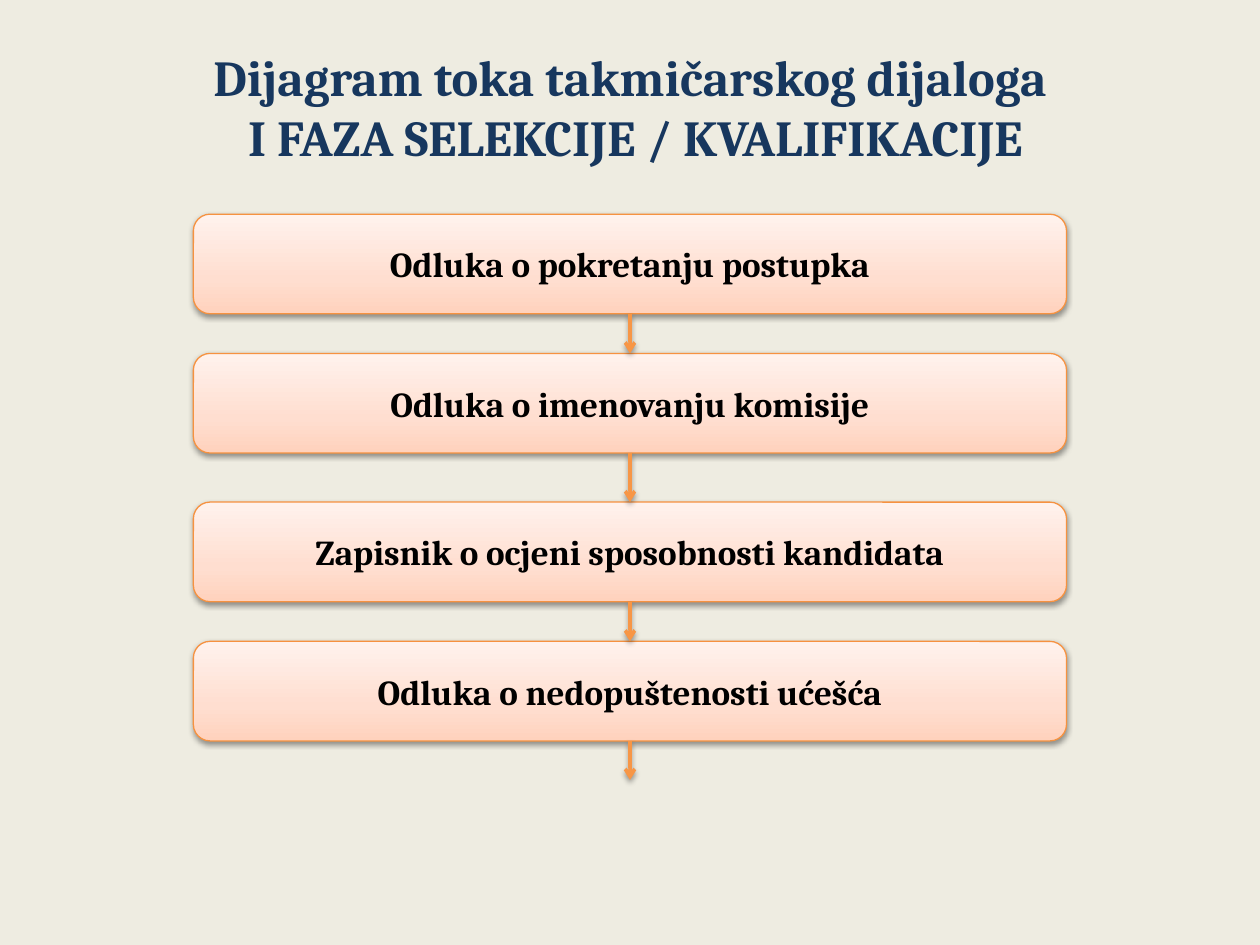
from pptx import Presentation, util as u
from pptx.dml.color import RGBColor
from pptx.enum import shapes, text
from pptx.oxml import parse_xml
from pptx.oxml.ns import nsdecls


def rgb(value):
    """Return the colour for a hex string."""
    return RGBColor.from_string(value)


class FlowSlide:
    """Style and drawing methods for a flow diagram on a grid of 0.1 inch cells."""

    FONT, TITLE, INK = "Cambria", "17375E", "000000"
    EDGE, ARROW, BACK = "F69240", "F79646", "EEECE1"
    STOPS = ((0, "FFD2BD"), (35, "FFDED0"), (100, "FFF2ED"))

    def __init__(self, prs, cols=100, rows=75):
        """Add a title-only slide with a plain background."""
        self.s = prs.slides.add_slide(prs.slide_layouts[5])
        self.cell_w, self.cell_h = prs.slide_width / cols, prs.slide_height / rows
        fill = self.s.background.fill
        fill.solid()
        fill.fore_color.rgb = rgb(self.BACK)

    def at(self, col, row):
        """Convert a grid position or size to lengths."""
        return u.Emu(round(col * self.cell_w)), u.Emu(round(row * self.cell_h))

    def add_text(self, tf, lines, size, color):
        """Set centred bold lines in one paragraph."""
        tf.word_wrap = True
        tf.auto_size = text.MSO_AUTO_SIZE.NONE
        tf.vertical_anchor = text.MSO_ANCHOR.MIDDLE
        p = tf.paragraphs[0]
        p.alignment = text.PP_ALIGN.CENTER
        for i, line in enumerate(lines):
            if i:
                p.add_line_break()
            r = p.add_run()
            r.text = line
            r.font.name, r.font.size, r.font.bold = self.FONT, u.Pt(size), True
            r.font.color.rgb = rgb(color)

    def shade(self, sp):
        """Give a shape or connector a soft shadow below it."""
        sp._element.spPr.append(parse_xml(
            f'<a:effectLst {nsdecls("a")}><a:outerShdw blurRad="40000" dist="20000" '
            'dir="5400000" rotWithShape="0"><a:srgbClr val="000000">'
            '<a:alpha val="38000"/></a:srgbClr></a:outerShdw></a:effectLst>'))

    def title(self, lines, col, row, width, height):
        """Place and fill the title placeholder."""
        sp = self.s.shapes.title
        sp.left, sp.top = self.at(col, row)
        sp.width, sp.height = self.at(width, height)
        self.add_text(sp.text_frame, lines, 28.8, self.TITLE)

    def box(self, label, col, row, width, height):
        """Draw a rounded step with a vertical gradient."""
        sp = self.s.shapes.add_shape(shapes.MSO_SHAPE.ROUNDED_RECTANGLE,
                                     *self.at(col, row), *self.at(width, height))
        stops = "".join(f'<a:gs pos="{pos * 1000}"><a:srgbClr val="{color}"/></a:gs>'
                        for pos, color in self.STOPS)
        sp._element.spPr.append(parse_xml(
            f'<a:gradFill {nsdecls("a")} rotWithShape="1"><a:gsLst>{stops}</a:gsLst>'
            '<a:lin ang="16200000" scaled="0"/></a:gradFill>'))
        sp.line.color.rgb = rgb(self.EDGE)
        sp.line.width = u.Pt(0.75)
        self.shade(sp)
        self.add_text(sp.text_frame, [label], 20, self.INK)
        return sp

    def arrow(self, col, top, bottom, source, target=None):
        """Draw a downward arrow joined to the steps it links."""
        cn = self.s.shapes.add_connector(shapes.MSO_CONNECTOR.STRAIGHT,
                                         *self.at(col, top), *self.at(col, bottom))
        cn.begin_connect(source, 2)
        if target is not None:
            cn.end_connect(target, 0)
        cn.line.color.rgb = rgb(self.ARROW)
        cn.line.width = u.Pt(2)
        cn.line._get_or_add_ln().append(parse_xml(f'<a:tailEnd {nsdecls("a")} type="arrow"/>'))
        self.shade(cn)


def main():
    """Build the flow diagram and save it."""
    prs = Presentation()
    prs.slide_width, prs.slide_height = u.Inches(10), u.Inches(7.5)
    slide = FlowSlide(prs)
    slide.title(["Dijagram toka takmičarskog dijaloga",
                 " I FAZA SELEKCIJE / KVALIFIKACIJE"], 5, 3, 90, 10.9)
    steps = [("Odluka o pokretanju postupka", 17),
             ("Odluka o imenovanju komisije", 28.05),
             ("Zapisnik o ocjeni sposobnosti kandidata", 39.85),
             ("Odluka o nedopuštenosti ućešća", 50.9)]
    width, height = 69.3, 7.9
    boxes = [slide.box(label, 50 - width / 2, row, width, height) for label, row in steps]
    tops = [row for _, row in steps] + [61.9]
    for i, (source, target) in enumerate(zip(boxes, boxes[1:] + [None])):
        slide.arrow(50, tops[i] + height, tops[i + 1], source, target)
    prs.save("out.pptx")


if __name__ == "__main__":
    main()
